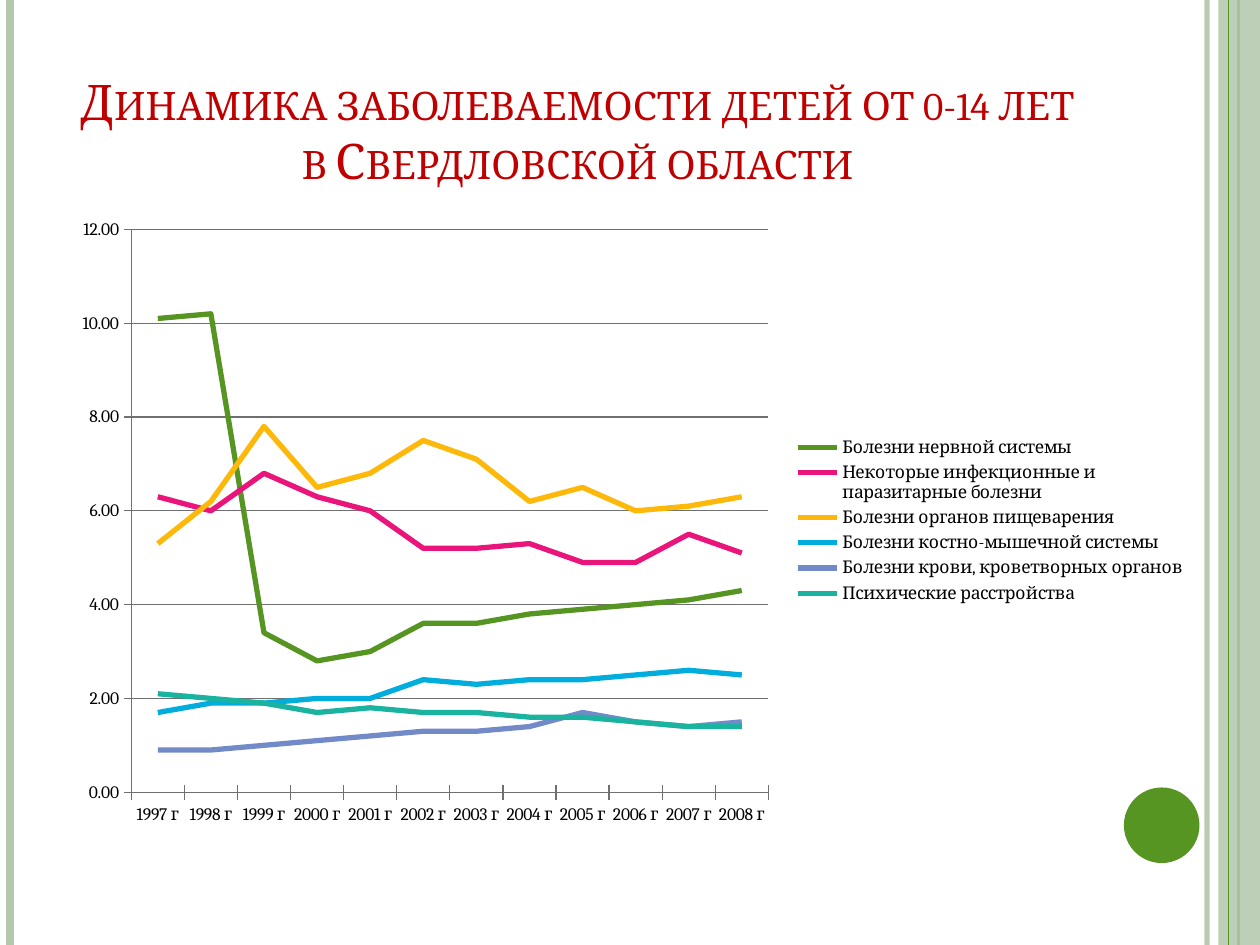
"""Build the slide on child morbidity trends with a six-series line chart."""
import pptx
import pptx.chart.data
import pptx.dml.color
import pptx.enum.chart
import pptx.enum.shapes
import pptx.enum.text
import pptx.oxml
import pptx.util
from pptx.util import Inches

NS = ('xmlns:a="http://schemas.openxmlformats.org/drawingml/2006/main" '
      'xmlns:c="http://schemas.openxmlformats.org/drawingml/2006/chart"')


def paint(fmt, color, alpha=None):
    fmt.solid()
    fmt.fore_color.rgb = pptx.dml.color.RGBColor.from_string(color)
    if alpha:
        clr = fmt._xPr.find(".//" + pptx.oxml.ns.qn("a:srgbClr"))
        clr.append(pptx.oxml.parse_xml(f'<a:alpha {NS} val="{alpha * 1000}"/>'))


def layout_xml(x, y, w, h, inner=""):
    return pptx.oxml.parse_xml(
        f'<c:layout {NS}><c:manualLayout>{inner}<c:xMode val="edge"/><c:yMode val="edge"/>'
        f'<c:x val="{x}"/><c:y val="{y}"/><c:w val="{w}"/><c:h val="{h}"/>'
        '</c:manualLayout></c:layout>')


prs = pptx.Presentation()
prs.slide_width, prs.slide_height = Inches(10), Inches(7.5)
s = prs.slides.add_slide(prs.slide_layouts[5])

SHAPE = pptx.enum.shapes.MSO_SHAPE
stripes = [
    (9.58, "B4C8AC", 3, 93),
    (0.08, "B4C8AC", 4.5, None),
    (9.83, "579523", 1.5, None),
    (9.75, "579523", 0.75, None),
]
blocks = [
    (SHAPE.RECTANGLE, 9.67, 0, 0.33, 7.5, "B4C8AC", 87),
    (SHAPE.OVAL, 8.92, 6.25, 0.6, 0.6, "579523", None),
]


for i, (x, color, width, alpha) in enumerate(stripes):
    if i == 3:
        for kind, left, top, w, h, fill, opacity in blocks:
            sp = s.shapes.add_shape(kind, Inches(left), Inches(top), Inches(w), Inches(h))
            sp.shadow.inherit = False
            paint(sp.fill, fill, opacity)
            sp.line.fill.background()
    cn = s.shapes.add_connector(pptx.enum.shapes.MSO_CONNECTOR.STRAIGHT,
                                Inches(x), 0, Inches(x), Inches(7.5))
    cn.line.width = pptx.util.Pt(width)
    paint(cn.line.fill, color, alpha)
    cn._element.spPr.append(pptx.oxml.parse_xml(f"<a:effectLst {NS}/>"))

title = s.shapes.title
title.left, title.top, title.width, title.height = map(Inches, (0.5, 0.3, 8.17, 1.25))
tf = title.text_frame
tf.word_wrap = True
tf.auto_size = pptx.enum.text.MSO_AUTO_SIZE.NONE
tf.vertical_anchor = pptx.enum.text.MSO_ANCHOR.BOTTOM
p = tf.paragraphs[0]
p.alignment = pptx.enum.text.PP_ALIGN.CENTER
r = p.add_run()
r.text = "Динамика заболеваемости детей от 0-14 лет в Свердловской области"
r.font.size = pptx.util.Pt(28)
r.font.name = "Cambria"
paint(r.font.fill, "C00000")
r.font._element.set("cap", "small")

diseases = [
    ("Болезни нервной системы", "579523",
     [10.1, 10.2, 3.4, 2.8, 3, 3.6, 3.6, 3.8, 3.9, 4, 4.1, 4.3]),
    ("Некоторые инфекционные и паразитарные болезни", "EA157A",
     [6.3, 6, 6.8, 6.3, 6, 5.2, 5.2, 5.3, 4.9, 4.9, 5.5, 5.1]),
    ("Болезни органов пищеварения", "FEB80A",
     [5.3, 6.2, 7.8, 6.5, 6.8, 7.5, 7.1, 6.2, 6.5, 6, 6.1, 6.3]),
    ("Болезни костно-мышечной системы", "00ADDC",
     [1.7, 1.9, 1.9, 2, 2, 2.4, 2.3, 2.4, 2.4, 2.5, 2.6, 2.5]),
    ("Болезни крови, кроветворных органов", "738AC8",
     [0.9, 0.9, 1, 1.1, 1.2, 1.3, 1.3, 1.4, 1.7, 1.5, 1.4, 1.5]),
    ("Психические расстройства", "1AB39F",
     [2.1, 2, 1.9, 1.7, 1.8, 1.7, 1.7, 1.6, 1.6, 1.5, 1.4, 1.4]),
]
data = pptx.chart.data.CategoryChartData(number_format="0.00")
data.categories = [f"{year} г" for year in range(1997, 2009)]
for name, color, values in diseases:
    data.add_series(name, values)
chart = s.shapes.add_chart(pptx.enum.chart.XL_CHART_TYPE.LINE, Inches(0.5), Inches(1.62),
                           Inches(9.03), Inches(5.02), data).chart
chart.has_title = False
chart.font.size = pptx.util.Pt(10)
chart.font.name = "Cambria"
paint(chart.font.fill, "000000")

plot = chart.plots[0]
plot.vary_by_categories = False
for series, (name, color, values) in zip(plot.series, diseases):
    series.smooth = False
    series.marker.style = pptx.enum.chart.XL_MARKER_STYLE.NONE
    series.format.line.width = pptx.util.Pt(3)
    paint(series.format.line.fill, color)

axis = chart.value_axis
axis.minimum_scale, axis.maximum_scale, axis.major_unit = 0, 12, 2
axis.has_major_gridlines = True
axis.tick_labels.number_format = "0.00"
axis.tick_labels.number_format_is_linked = False
for ax in (axis, chart.category_axis):
    ax.major_tick_mark = pptx.enum.chart.XL_TICK_MARK.CROSS
for line in (axis.format.line, chart.category_axis.format.line, axis.major_gridlines.format.line):
    line.width = pptx.util.Pt(0.75)
    paint(line.fill, "707070")

chart.has_legend = True
chart.legend.position = pptx.enum.chart.XL_LEGEND_POSITION.RIGHT
chart.legend.include_in_layout = False
area = chart._chartSpace.chart.plotArea
for old in area.findall(pptx.oxml.ns.qn("c:layout")):
    area.remove(old)
area.insert(0, layout_xml(0.06, 0.04, 0.56, 0.89, '<c:layoutTarget val="inner"/>'))
legend = chart.legend._element
for old in legend.findall(pptx.oxml.ns.qn("c:layout")):
    legend.remove(old)
legend.insert(1, layout_xml(0.64, 0.36, 0.35, 0.28))

prs.save("out.pptx")
